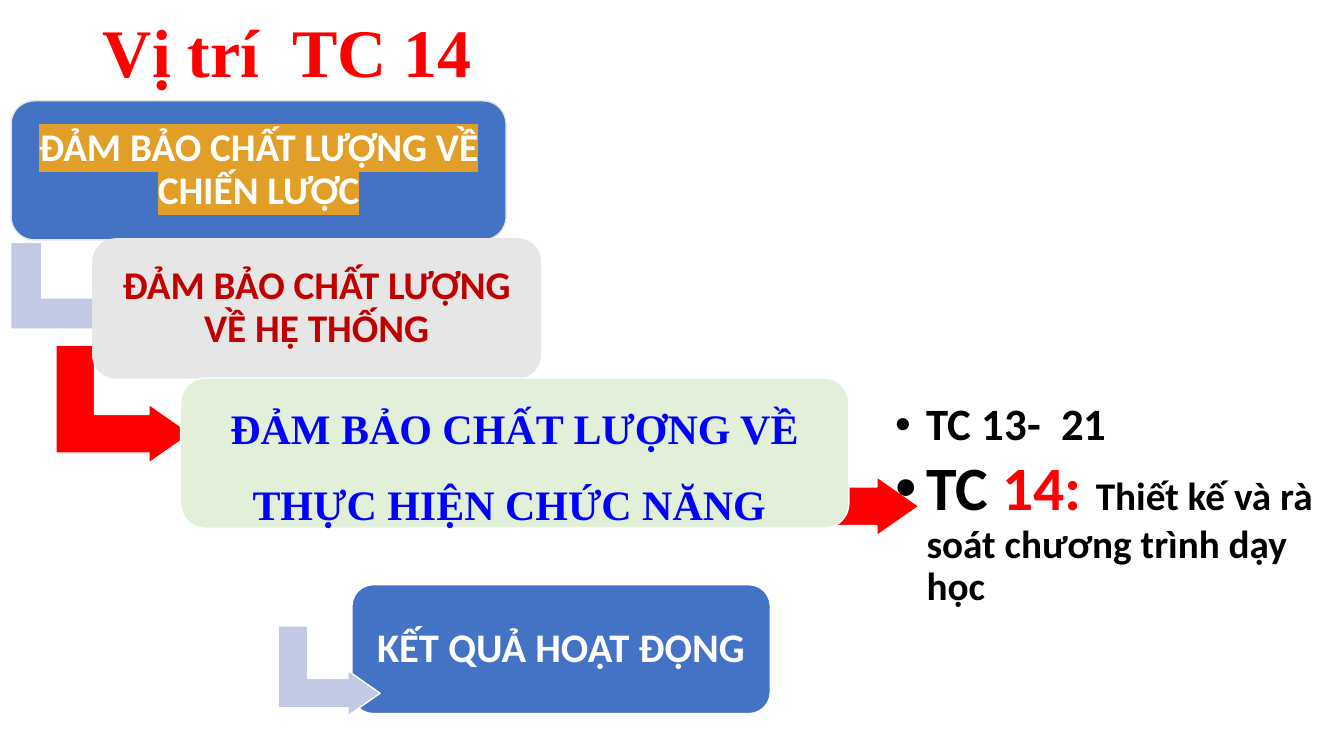
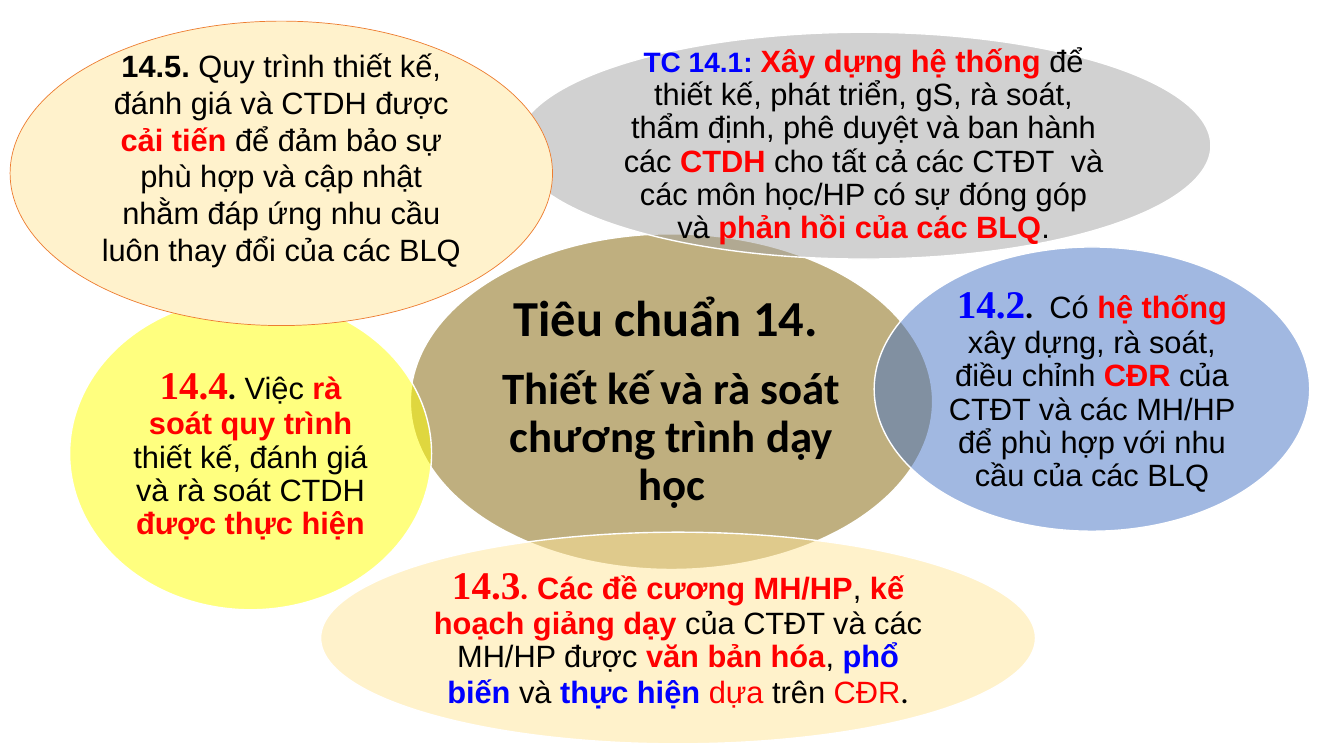
import pptx
import pptx.util
import pptx.dml.color
import pptx.enum.shapes
import pptx.enum.text
import pptx.oxml
import pptx.oxml.ns
from dataclasses import dataclass
from lxml import etree

Inches = pptx.util.Inches
Pt = pptx.util.Pt
SHAPES = pptx.enum.shapes.MSO_SHAPE
ALIGN = pptx.enum.text.PP_ALIGN
MIDDLE = pptx.enum.text.MSO_ANCHOR.MIDDLE
qn = pptx.oxml.ns.qn


@dataclass(frozen=True)
class Style:
    font: str
    size: float
    color: str
    bold: bool = True
    italic: bool = False
    highlight: str = ""


class Theme:
    width, height = 13.33, 7.5
    white, black, red, blue = "FFFFFF", "000000", "FF0000", "0000FF"
    box_blue, grey, green = "4472C4", "E7E6E6", "E2F0D9"
    pale_arrow, orange = "C1C9E4", "ED7D31"
    sans, body, serif = "Arial", "Calibri", "Times New Roman"
    line_spacing = 0.9
    step_inset, bullet_inset, oval_inset = 0.12, 0.13, 0.04
    bullet_indent = 0.31
    arrow_adjustments = (0.328, 0.25, 0.358)
    corner = 0.167
    step_gap, bullet_gap = 0.35, 0.15    # space after, as share of type size


TITLE = Style(Theme.serif, 48.6, Theme.red)
STRATEGY = Style(Theme.body, 28, Theme.white, highlight="E19F27")
SYSTEM = Style(Theme.body, 28, "C00000")
FUNCTION = Style(Theme.serif, 30, Theme.blue)
RESULT = Style(Theme.body, 29, Theme.white)
BULLET = Style(Theme.body, 32, Theme.black)
BULLET_BIG = Style(Theme.body, 44, Theme.black)
BULLET_RED = Style(Theme.body, 44, Theme.red)
BULLET_SMALL = Style(Theme.body, 28, Theme.black)
HEADING = Style(Theme.body, 36, Theme.black)
PLAIN = Style(Theme.sans, 22, Theme.black, False)
PLAIN_RED = Style(Theme.sans, 22, Theme.red, False)
STRONG = Style(Theme.sans, 22, Theme.black)
RED = Style(Theme.sans, 22, Theme.red)
BLUE = Style(Theme.sans, 22, Theme.blue)
CODE = Style(Theme.sans, 20, Theme.blue)
NUMBER_BLUE = Style(Theme.serif, 28, Theme.blue)
NUMBER_RED = Style(Theme.serif, 28, Theme.red)
DOT = Style(Theme.body, 24, Theme.black, True, True)
DOT_RED = Style(Theme.body, 24, Theme.red, True, True)
FULL_STOP = Style(Theme.body, 24, Theme.black, False)

# Frames are left, top, width, height in inches.
SLIDE_TITLE = "Vị trí  TC 14"
TITLE_FRAME = (0.92, 0.14, 11.5, 0.82)

# frame, fill, line, line spacing, text, style
STEPS = [
    ((0.11, 1, 4.91, 1.38), Theme.box_blue, Theme.grey, Theme.line_spacing,
     "ĐẢM BẢO CHẤT LƯỢNG VỀ CHIẾN LƯỢC", STRATEGY),
    ((0.92, 2.37, 4.44, 1.38), Theme.grey, Theme.grey, Theme.line_spacing,
     "ĐẢM BẢO CHẤT LƯỢNG VỀ HỆ THỐNG", SYSTEM),
    ((1.79, 3.75, 6.63, 1.49), Theme.green, Theme.white, 1.5,
     "ĐẢM BẢO CHẤT LƯỢNG VỀ THỰC HIỆN CHỨC NĂNG ", FUNCTION),
    ((3.49, 5.8, 4.15, 1.28), Theme.box_blue, Theme.white, Theme.line_spacing,
     "KẾT QUẢ HOẠT ĐỘNG", RESULT),
]

# frame before the quarter turn, fill
ARROWS_BEHIND = [
    ((0.45, 2.06, 0.94, 1.63), Theme.pale_arrow),
    ((0.64, 3.34, 1.17, 1.34), Theme.red),
    ((7.86, 4.06, 1.17, 1.34), Theme.red),
]
ARROWS_IN_FRONT = [((2.82, 6.15, 0.89, 1.01), Theme.pale_arrow)]

BULLETS_FRAME = (8.75, 4.07, 4.48, 1.89)
BULLETS = [
    [("TC 13-  21", BULLET)],
    [("TC ", BULLET_BIG), ("14: ", BULLET_RED),
     ("Thiết kế và rà soát chương trình dạy học", BULLET_SMALL)],
]

# frame, fill, paragraphs of (text, style) runs
OVALS = [
    ((4.07, 2.32, 5.18, 3.33), "806000", [
        [("Tiêu chuẩn 14. ", HEADING)],
        [("Thiết kế và rà soát chương trình dạy học", BULLET)],
    ]),
    ((5.12, 0.32, 6.89, 2.25), "A5A5A5", [[
        ("TC 14.1: ", CODE), ("Xây dựng hệ thống ", RED),
        ("để thiết kế, phát triển, gS, rà soát, thẩm định, phê duyệt "
         "và ban hành các ", PLAIN),
        ("CTDH ", RED),
        ("cho tất cả các CTĐT  và các môn học/HP có sự đóng góp và ", PLAIN),
        ("phản hồi của các BLQ", RED), (".", PLAIN),
    ]]),
    ((8.67, 2.45, 4.32, 2.82), Theme.box_blue, [[
        ("14.2", NUMBER_BLUE), (".  ", DOT), ("Có ", PLAIN),
        ("hệ thống ", RED), ("xây dựng, rà soát, điều chỉnh ", PLAIN),
        ("CĐR", RED),
        (" của CTĐT và các MH/HP để phù hợp với nhu cầu của các BLQ", PLAIN),
    ]]),
    ((3.18, 5.28, 7.09, 2.1), "FFE699", [[
        ("14.3", NUMBER_RED), (". ", DOT_RED), ("Các đề cương MH/HP", RED),
        (", ", PLAIN), ("kế hoạch giảng dạy ", RED),
        ("của CTĐT và các MH/HP được ", PLAIN), ("văn bản hóa", RED),
        (", ", PLAIN), ("phổ biến", BLUE), (" và ", PLAIN),
        ("thực hiện ", BLUE), ("dựa ", PLAIN_RED), ("trên ", PLAIN),
        ("CĐR", PLAIN_RED), (".", FULL_STOP),
    ]]),
    ((0.69, 2.95, 3.59, 3.1), "FFFF00", [[
        ("14.4", NUMBER_RED), (". ", DOT), ("Việc ", PLAIN),
        ("rà soát quy trình ", RED),
        ("thiết kế, đánh giá và rà soát CTDH ", PLAIN),
        ("được thực hiện", RED),
    ]]),
]
IMPROVEMENT_FRAME = (0.1, 0.21, 5.38, 3.02)
IMPROVEMENT_FILL = "FFF2CC"
IMPROVEMENT_INSETS = (0.1, 0.05, 0.1, 0.37)
IMPROVEMENT = [[
    ("14.5. ", STRONG), ("Quy trình thiết kế, đánh giá và CTDH được ", PLAIN),
    ("cải tiến ", RED),
    ("để đảm bảo sự phù hợp và cập nhật nhằm đáp ứng nhu cầu luôn thay đổi "
     "của các BLQ", PLAIN),
]]


def rgb(color):
    return pptx.dml.color.RGBColor.from_string(color)


def place(frame):
    return [Inches(length) for length in frame]


def add_run(paragraph, text, style):
    run = paragraph.add_run()
    run.text = text
    font = run.font
    font.name, font.size = style.font, Pt(style.size)
    font.bold, font.italic = style.bold, style.italic
    font.color.rgb = rgb(style.color)
    if style.highlight:
        properties = run._r.get_or_add_rPr()
        highlight = etree.Element(qn("a:highlight"))
        etree.SubElement(highlight, qn("a:srgbClr"), val=style.highlight)
        properties.find(qn("a:latin")).addprevious(highlight)


def add_bullet(paragraph):
    properties = paragraph._p.get_or_add_pPr()
    indent = Inches(Theme.bullet_indent)
    properties.set("marL", str(indent))
    properties.set("indent", str(-indent))
    etree.SubElement(properties, qn("a:buFont"), typeface=Theme.sans)
    etree.SubElement(properties, qn("a:buChar"), char="•")


def write(shape, paragraphs, insets, align=ALIGN.CENTER,
          spacing=Theme.line_spacing, gap=Theme.step_gap, bullets=False):
    """Fill a shape with paragraphs of (text, style) runs."""
    frame = shape.text_frame
    frame.word_wrap = True
    frame.vertical_anchor = MIDDLE
    (frame.margin_left, frame.margin_top,
     frame.margin_right, frame.margin_bottom) = place(insets)
    for index, runs in enumerate(paragraphs):
        paragraph = frame.add_paragraph() if index else frame.paragraphs[0]
        paragraph.alignment = align
        paragraph.line_spacing = spacing
        paragraph.space_after = Pt(round(gap * runs[0][1].size))
        if bullets:
            add_bullet(paragraph)
        for text, style in runs:
            add_run(paragraph, text, style)


def add_shape(slide, kind, frame, fill, line=Theme.white, line_width=1,
              opacity=100):
    shape = slide.shapes.add_shape(kind, *place(frame))
    shape.shadow.inherit = False
    shape.fill.solid()
    shape.fill.fore_color.rgb = rgb(fill)
    if opacity < 100:
        color = shape._element.spPr.find(qn("a:solidFill"))[0]
        etree.SubElement(color, qn("a:alpha"), val=str(opacity * 1000))
    shape.line.color.rgb = rgb(line)
    shape.line.width = Pt(line_width)
    return shape


def add_arrows(slide, arrows):
    for frame, fill in arrows:
        arrow = add_shape(slide, SHAPES.BENT_UP_ARROW, frame, fill)
        arrow.rotation = 90
        for index, value in enumerate(Theme.arrow_adjustments):
            arrow.adjustments[index] = value


def build_position_slide(presentation):
    slide = presentation.slides.add_slide(presentation.slide_layouts[5])
    title = slide.shapes.title
    title.left, title.top, title.width, title.height = place(TITLE_FRAME)
    write(title, [[(SLIDE_TITLE, TITLE)]], (0.1, 0.05, 0.1, 0.05),
          ALIGN.LEFT, gap=0)

    add_arrows(slide, ARROWS_BEHIND)
    for frame, fill, line, spacing, text, style in STEPS:
        box = add_shape(slide, SHAPES.ROUNDED_RECTANGLE, frame, fill, line)
        box.adjustments[0] = Theme.corner
        gap = Theme.step_gap if spacing < 1 else 0.2
        write(box, [[(text, style)]], [Theme.step_inset] * 4,
              spacing=spacing, gap=gap)
    add_arrows(slide, ARROWS_IN_FRONT)

    criteria = slide.shapes.add_textbox(*place(BULLETS_FRAME))
    write(criteria, BULLETS, [Theme.bullet_inset] * 4, ALIGN.LEFT,
          gap=Theme.bullet_gap, bullets=True)


def build_criteria_slide(presentation):
    slide = presentation.slides.add_slide(presentation.slide_layouts[6])
    for frame, fill, paragraphs in OVALS:
        oval = add_shape(slide, SHAPES.OVAL, frame, fill, opacity=50)
        write(oval, paragraphs, [Theme.oval_inset] * 4)
    improvement = add_shape(slide, SHAPES.OVAL, IMPROVEMENT_FRAME,
                            IMPROVEMENT_FILL, Theme.orange, 0.5)
    write(improvement, IMPROVEMENT, IMPROVEMENT_INSETS, spacing=1, gap=0)


def main():
    presentation = pptx.Presentation()
    presentation.slide_width = Inches(Theme.width)
    presentation.slide_height = Inches(Theme.height)
    build_position_slide(presentation)
    build_criteria_slide(presentation)
    presentation.save("out.pptx")


if __name__ == "__main__":
    main()
